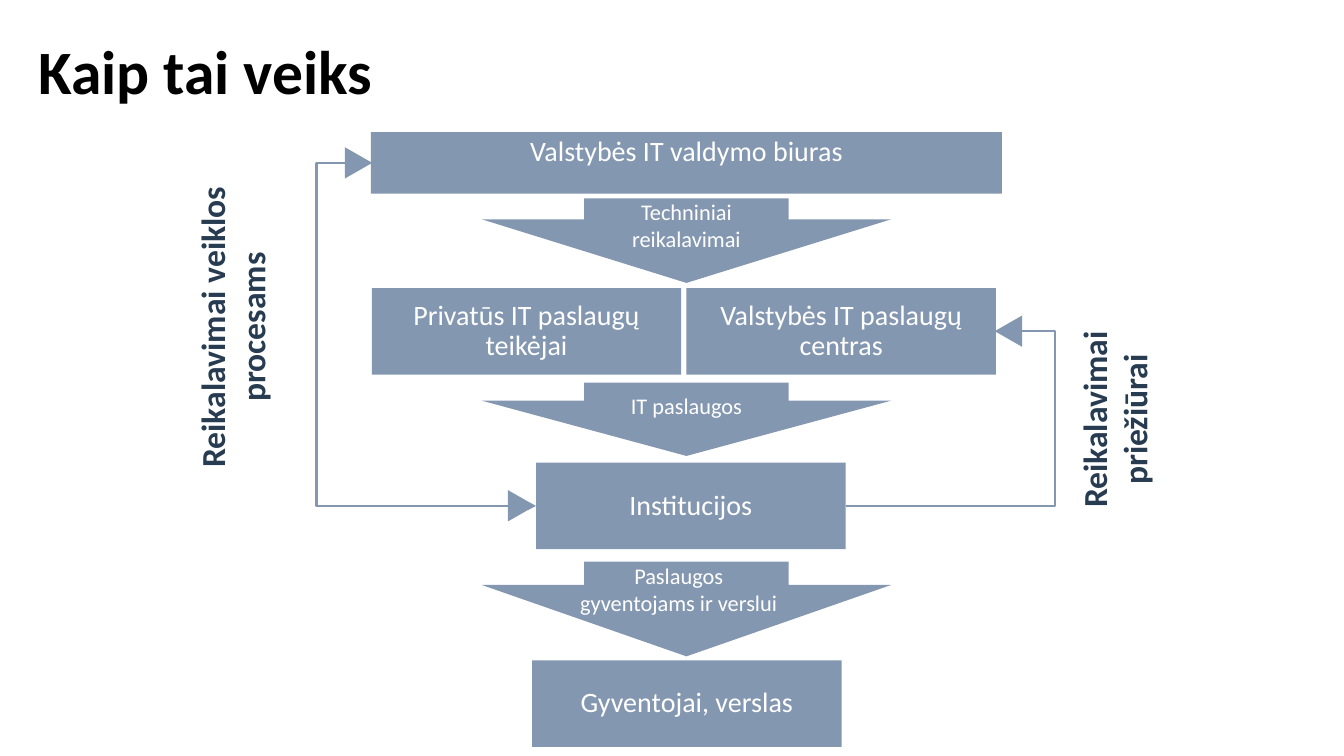
from pptx import Presentation
from pptx.dml.color import RGBColor
from pptx.enum.shapes import MSO_CONNECTOR as Link, MSO_SHAPE as Kind
from pptx.enum.text import MSO_ANCHOR as Anchor, PP_ALIGN as Align
from pptx.oxml.ns import qn
from pptx.util import Cm, Pt
from lxml.etree import SubElement

BOX_W, BOX_H = 7.8, 2.18
ARROW_W, AXIS = 10.31, 17.3


def paint(color, code):
    color.rgb = RGBColor.from_string(code)


class Chart:
    font, steel, navy, white, black = "Calibri", "8497B0", "273B51", "FFFFFF", "000000"

    def __init__(self, slide):
        self.slide = slide

    def letter(self, shape, text, size, code, bold=False, align=Align.CENTER,
               anchor=Anchor.MIDDLE, space=1.0):
        """Put one styled paragraph into a shape."""
        frame = shape.text_frame
        frame.word_wrap = True
        frame.vertical_anchor = anchor
        par = frame.paragraphs[0]
        par.text = text
        par.alignment = align
        par.line_spacing = space
        par.font.name, par.font.size, par.font.bold = self.font, Pt(size), bold
        paint(par.font.color, code)

    def title(self, text, *place):
        shape = self.slide.shapes.title
        shape.left, shape.top, shape.width, shape.height = map(Cm, place)
        self.letter(shape, text, 44, self.black, True, Align.LEFT, space=0.9)

    def solid(self, kind, *place):
        shape = self.slide.shapes.add_shape(kind, *map(Cm, place))
        shape.shadow.inherit = False
        shape.fill.solid()
        paint(shape.fill.fore_color, self.steel)
        shape.line.fill.background()
        return shape

    def box(self, text, x, y, w=BOX_W, h=BOX_H, anchor=Anchor.MIDDLE):
        shape = self.solid(Kind.RECTANGLE, x, y, w, h)
        self.letter(shape, text, 20, self.white, anchor=anchor, space=0.9)

    def arrow(self, text, y, h):
        shape = self.solid(Kind.DOWN_ARROW, AXIS - ARROW_W / 2, y, ARROW_W, h)
        shape.adjustments[0], shape.adjustments[1] = 0.5, 0.752
        if text:
            self.letter(shape, text, 16, self.white)

    def label(self, text, place, size, code, bold=False, turn=0):
        shape = self.slide.shapes.add_textbox(*map(Cm, place))
        shape.rotation = turn
        self.letter(shape, text, size, code, bold, anchor=Anchor.TOP)

    def link(self, start, end, bend, ends):
        """Draw an elbow line; bend is the turning point as a share of its width."""
        line = self.slide.shapes.add_connector(Link.ELBOW, *map(Cm, start + end))
        paint(line.line.color, self.steel)
        line.line.width = Pt(1.5)
        props = line._element.spPr
        guides = props.find(qn("a:prstGeom")).get_or_add_avLst()
        SubElement(guides, qn("a:gd"), name="adj1", fmla=f"val {round(bend * 100000)}")
        for tag in ends:
            SubElement(props.find(qn("a:ln")), qn(tag), type="triangle")
        SubElement(props, qn("a:effectLst"))

    def tip(self, x, y, turn):
        self.solid(Kind.ISOSCELES_TRIANGLE, x, y, 0.79, 0.69).rotation = turn


def main():
    deck = Presentation()
    deck.slide_width, deck.slide_height = Cm(33.87), Cm(19.05)
    flow = Chart(deck.slides.add_slide(deck.slide_layouts[5]))

    flow.title("Kaip tai veiks", 0.71, 0.03, 25.6, 3.68)

    flow.box("Valstybės IT valdymo biuras", 9.35, 3.33, 15.9, 1.55, Anchor.TOP)
    flow.box("Privatūs IT paslaugų teikėjai", 9.37, 7.26)
    flow.box("Valstybės IT paslaugų centras", 17.3, 7.26)
    flow.box("Institucijos", 13.51, 11.66)
    flow.box("Gyventojai, verslas", 13.41, 16.64)

    flow.arrow("Techniniai reikalavimai", 5, 2.13)
    flow.arrow("IT paslaugos", 9.64, 1.85)
    flow.arrow("", 14.15, 2.39)
    flow.label("Paslaugos gyventojams ir verslui", (14.35, 14.05, 5.51, 2.31),
               16, flow.white)

    flow.link((13.51, 12.75), (9.35, 4.1), 1.33, ("a:headEnd", "a:tailEnd"))
    flow.link((21.31, 12.75), (25.1, 8.35), 1.39, ("a:tailEnd",))
    for x, y, turn in ((8.64, 3.76, 90), (12.75, 12.4, 90), (25.02, 8, 270)):
        flow.tip(x, y, turn)

    for text, x, y in (("Reikalavimai veiklos procesams", 1.7, 7.09),
                       ("Reikalavimai priežiūrai", 23.93, 9.42)):
        flow.label(text, (x, y, 8.31, 2.31), 24, flow.navy, True, 270)

    deck.save("out.pptx")


if __name__ == "__main__":
    main()
